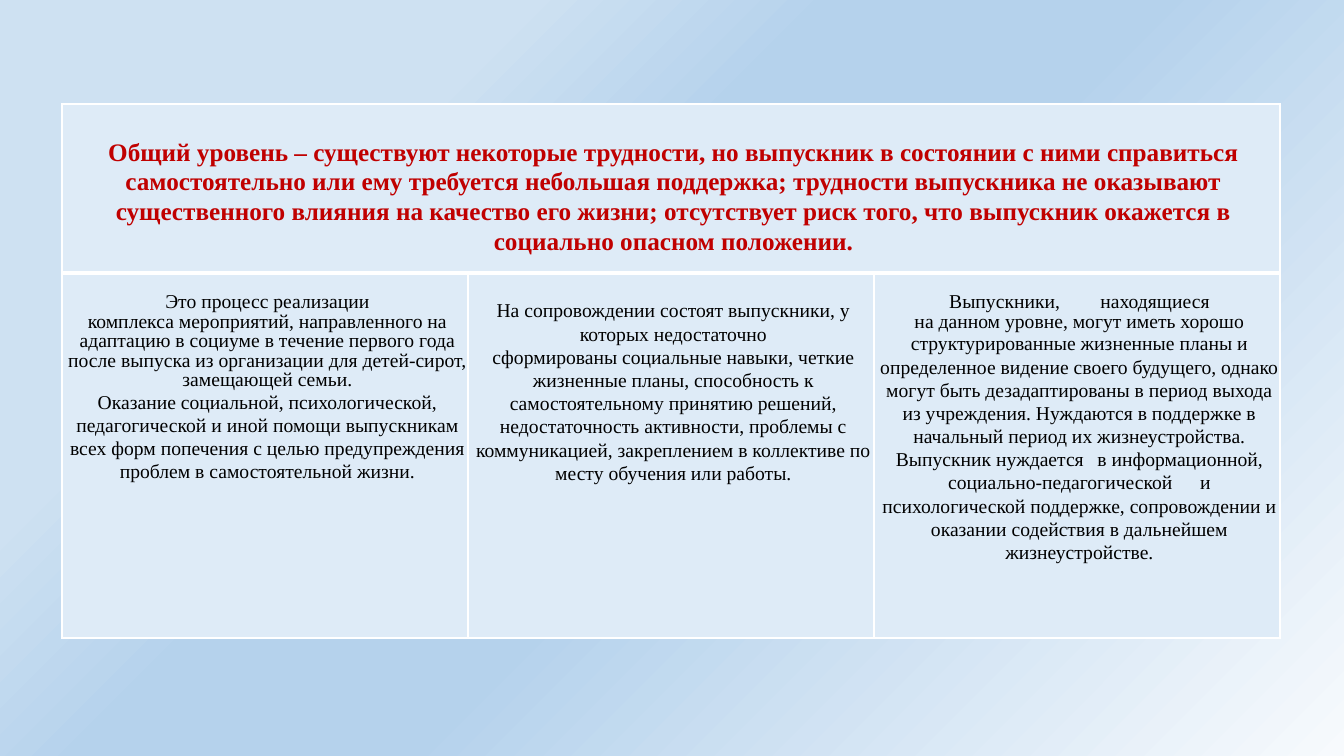
from dataclasses import dataclass

from lxml.etree import SubElement
from pptx import Presentation
from pptx.dml.color import RGBColor
from pptx.enum.text import MSO_ANCHOR, PP_ALIGN
from pptx.oxml.ns import qn
from pptx.slide import Slide
from pptx.table import Table, _Cell
from pptx.util import Emu, Pt

EMU_PER_PX = 914400 / 100.8


@dataclass(frozen=True)
class Theme:
    font: str = "Times New Roman"
    heading_size: int = 18
    body_size: int = 14
    heading_color: str = "C00000"
    body_color: str = "000000"
    cell_fill: str = "DEEBF7"
    border: str = "FFFFFF"
    thin: int = 1
    thick: int = 3
    backdrop: tuple[tuple[int, str], ...] = (
        (0, "F7FAFD"), (45, "B5D2EC"), (60, "B5D2EC"), (75, "CEE1F2"))
    backdrop_angle: int = 135


@dataclass(frozen=True)
class Passage:
    text: str
    line_spacing: float = 1.07


@dataclass(frozen=True)
class Column:
    top_margin: int
    passages: tuple[Passage, ...]


THEME = Theme()
TABLE_LEFT, TABLE_TOP = 62, 104
COLUMN_WIDTH = 406
ROW_HEIGHTS = (169, 365)
LEFT_MARGIN, RIGHT_MARGIN = 6, 1
HEADING_BOTTOM_MARGIN = 17

LEVEL = Passage(
    "Общий уровень – существуют некоторые трудности, но выпускник в состоянии с ними "
    "справиться самостоятельно или ему требуется небольшая поддержка; трудности выпускника "
    "не оказывают существенного влияния на качество его жизни; отсутствует риск того, "
    "что выпускник окажется в социально опасном положении.")

COLUMNS = (
    Column(20, (
        Passage("Это процесс реализации", 0.9),
        Passage("комплекса мероприятий, направленного на адаптацию в социуме в течение первого "
                "года после выпуска из организации для детей-сирот, замещающей семьи.", 0.9),
        Passage("Оказание социальной, психологической, педагогической и иной помощи выпускникам "
                "всех форм попечения с целью предупреждения проблем в самостоятельной жизни."),
    )),
    Column(26, (
        Passage("На сопровождении состоят выпускники, у которых недостаточно"),
        Passage("сформированы социальные навыки, четкие жизненные планы, способность к "
                "самостоятельному принятию решений, недостаточность активности, проблемы с "
                "коммуникацией, закреплением в коллективе по месту обучения или работы."),
    )),
    Column(20, (
        Passage("Выпускники, \tнаходящиеся", 0.9),
        Passage("на данном уровне, могут иметь хорошо", 0.9),
        Passage("структурированные жизненные планы и определенное видение своего будущего, "
                "однако могут быть дезадаптированы в период выхода из учреждения. Нуждаются в "
                "поддержке в начальный период их жизнеустройства. Выпускник нуждается \tв "
                "информационной, социально-педагогической \tи психологической поддержке, "
                "сопровождении и оказании содействия в дальнейшем жизнеустройстве."),
    )),
)


def px(length: int) -> Emu:
    return Emu(round(length * EMU_PER_PX))


def paint_backdrop(slide: Slide) -> None:
    fill = slide.background.fill
    fill.gradient()
    fill.gradient_angle = THEME.backdrop_angle
    stops = next(slide.background._cSld.iter(qn("a:gsLst")))
    for stop in list(stops):
        stops.remove(stop)
    for position, color in THEME.backdrop:
        stop = SubElement(stops, qn("a:gs"), pos=str(position * 1000))
        SubElement(stop, qn("a:srgbClr"), val=color)


def style_cell(cell: _Cell, top_width: int, bottom_width: int) -> None:
    properties = cell._tc.get_or_add_tcPr()
    widths = {"L": THEME.thin, "R": THEME.thin, "T": top_width, "B": bottom_width}
    for side, width in widths.items():
        line = SubElement(properties, qn(f"a:ln{side}"), w=str(Pt(width)))
        solid = SubElement(line, qn("a:solidFill"))
        SubElement(solid, qn("a:srgbClr"), val=THEME.border)
    cell.fill.solid()
    cell.fill.fore_color.rgb = RGBColor.from_string(THEME.cell_fill)
    cell.margin_left, cell.margin_right = px(LEFT_MARGIN), px(RIGHT_MARGIN)
    cell.margin_top = cell.margin_bottom = 0


def write_passages(cell: _Cell, passages: tuple[Passage, ...], size: int, color: str,
                   bold: bool = False) -> None:
    frame = cell.text_frame
    for index, passage in enumerate(passages):
        paragraph = frame.add_paragraph() if index else frame.paragraphs[0]
        paragraph.alignment = PP_ALIGN.CENTER
        paragraph.line_spacing = passage.line_spacing
        run = paragraph.add_run()
        run.text = passage.text
        run.font.name = THEME.font
        run.font.size = Pt(size)
        run.font.bold = bold
        run.font.color.rgb = RGBColor.from_string(color)


def add_level_table(slide: Slide) -> Table:
    table = slide.shapes.add_table(
        len(ROW_HEIGHTS), len(COLUMNS), px(TABLE_LEFT), px(TABLE_TOP),
        px(COLUMN_WIDTH * len(COLUMNS)), px(sum(ROW_HEIGHTS))).table
    table.first_row = table.horz_banding = False
    for row, height in zip(table.rows, ROW_HEIGHTS):
        row.height = px(height)
    for index, column in enumerate(COLUMNS):
        table.columns[index].width = px(COLUMN_WIDTH)
        style_cell(table.cell(0, index), THEME.thin, THEME.thick)
        body = table.cell(1, index)
        style_cell(body, THEME.thick, THEME.thin)
        body.margin_top = px(column.top_margin)
        write_passages(body, column.passages, THEME.body_size, THEME.body_color)
    heading = table.cell(0, 0)
    heading.merge(table.cell(0, len(COLUMNS) - 1))
    heading.vertical_anchor = MSO_ANCHOR.BOTTOM
    heading.margin_bottom = px(HEADING_BOTTOM_MARGIN)
    write_passages(heading, (LEVEL,), THEME.heading_size, THEME.heading_color, bold=True)
    return table


def main() -> None:
    presentation = Presentation()
    presentation.slide_width, presentation.slide_height = px(1344), px(756)
    slide = presentation.slides.add_slide(presentation.slide_layouts[6])
    paint_backdrop(slide)
    add_level_table(slide)
    presentation.save("out.pptx")


if __name__ == "__main__":
    main()
